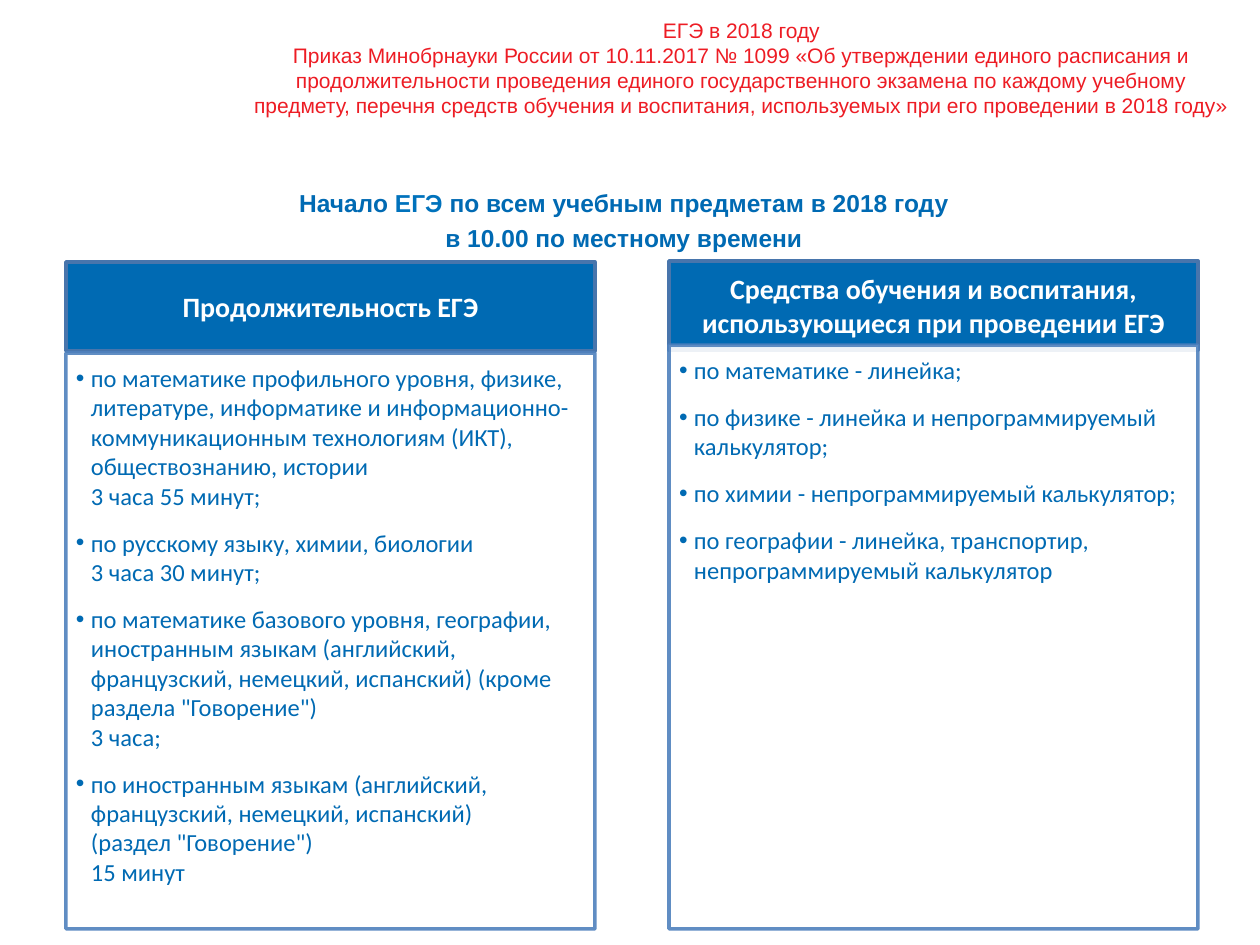
import pptx
import pptx.util
import pptx.dml.color
import pptx.enum.text
import pptx.oxml.ns
import lxml.etree

TITLE = (
    "ЕГЭ в 2018 году\v"
    "Приказ Минобрнауки России от 10.11.2017 № 1099 «Об утверждении единого расписания и "
    "продолжительности проведения единого государственного экзамена по каждому учебному "
    "предмету, перечня средств обучения и воспитания, используемых при его проведении в 2018 году»"
)
START = [
    ("Начало ", "blue"),
    ("ЕГЭ ", "bright_blue"),
    ("по всем учебным предметам в 2018 году\vв 10.00 по местному времени", "blue"),
]
COLUMNS = [
    {
        "heading": "Продолжительность ЕГЭ",
        "items": [
            "по математике профильного уровня, физике, литературе, информатике и "
            "информационно-коммуникационным технологиям (ИКТ), обществознанию, истории\v"
            "3 часа 55 минут;",
            "по русскому языку, химии, биологии\v3 часа 30 минут;",
            "по математике базового уровня, географии, иностранным языкам (английский, "
            "французский, немецкий, испанский) (кроме раздела \"Говорение\")\v3 часа;",
            "по иностранным языкам (английский, французский, немецкий, испанский)\v"
            "(раздел \"Говорение\")\v15 минут",
        ],
        "left": 66, "heading_top": 262, "list_top": 353,
    },
    {
        "heading": "Средства обучения и воспитания, использующиеся при проведении ЕГЭ",
        "items": [
            "по математике - линейка;",
            "по физике - линейка и непрограммируемый калькулятор;",
            "по химии - непрограммируемый калькулятор;",
            "по географии - линейка, транспортир, непрограммируемый калькулятор",
        ],
        "left": 669, "heading_top": 261, "list_top": 345,
    },
]
COLUMN_WIDTH, HEADING_HEIGHT, LIST_BOTTOM, INDENT = 529, 89, 929, 15

THEME = {
    "red": "ED1C24", "blue": "006AB3", "bright_blue": "0072BC", "white": "FFFFFF",
    "heading_line": "4875AC", "list_line": "4F81BD",
    "title_size": 12, "start_size": 14, "heading_size": 16, "list_size": 14,
    "title_font": "Arial", "column_font": "Calibri",
    "line_width": 2, "opacity": 90,
}
SCALE = 914400 / 126


def px(length):
    return pptx.util.Emu(round(length * SCALE))


def color(name):
    return pptx.dml.color.RGBColor.from_string(THEME[name])


def place(box, left, top, width, height):
    box.left, box.top, box.width, box.height = map(px, (left, top, width, height))


def set_frame(box, anchor, insets):
    frame = box.text_frame
    frame.word_wrap = True
    frame.auto_size = pptx.enum.text.MSO_AUTO_SIZE.NONE
    frame.vertical_anchor = anchor
    frame.margin_left, frame.margin_top, frame.margin_right, frame.margin_bottom = map(px, insets)
    return frame


def style(font, family, size, color_name, bold=False):
    font.name = THEME[family]
    font.size = pptx.util.Pt(THEME[size])
    font.bold = bold
    font.color.rgb = color(color_name)


def format_para(para, align, after):
    para.alignment = align
    para.space_before = pptx.util.Pt(0)
    para.space_after = pptx.util.Pt(after)


def paint(box, fill, line):
    box.fill.solid()
    box.fill.fore_color.rgb = color(fill)
    box.line.color.rgb = color(line)
    box.line.width = pptx.util.Pt(THEME["line_width"])


def make_translucent(box):
    for tint in box._element.spPr.iter(pptx.oxml.ns.qn("a:srgbClr")):
        alpha = lxml.etree.SubElement(tint, pptx.oxml.ns.qn("a:alpha"))
        alpha.set("val", str(THEME["opacity"] * 1000))


def add_bullet(para):
    props = para._p.get_or_add_pPr()
    props.set("marL", str(px(INDENT)))
    props.set("indent", str(-px(INDENT)))
    bullet_font = lxml.etree.SubElement(props, pptx.oxml.ns.qn("a:buFont"))
    bullet_font.set("typeface", "Arial")
    lxml.etree.SubElement(props, pptx.oxml.ns.qn("a:buChar")).set("char", "•")


def fill_title(box):
    place(box, 237, 0, 1009, 135)
    frame = set_frame(box, MIDDLE, (13, 6, 13, 6))
    frame.text = TITLE
    para = frame.paragraphs[0]
    format_para(para, CENTER, 0)
    for span in para.runs:
        style(span.font, "title_font", "title_size", "red")


def add_start(page):
    box = page.shapes.add_textbox(px(57), px(176), px(1134), px(91))
    para = set_frame(box, TOP, (14, 6, 14, 6)).paragraphs[0]
    format_para(para, CENTER, 11.5)
    para.line_spacing = 1.2
    para.text = "".join(text for text, tint in START)
    for span in list(para.runs):
        para._p.remove(span._r)
    for line_break in para._p.findall(pptx.oxml.ns.qn("a:br")):
        para._p.remove(line_break)
    for text, tint in START:
        for number, part in enumerate(text.split("\v")):
            if number:
                para.add_line_break()
            span = para.add_run()
            span.text = part
            style(span.font, "title_font", "start_size", tint, True)


def fill_heading(box, column):
    place(box, column["left"], column["heading_top"], COLUMN_WIDTH, HEADING_HEIGHT)
    paint(box, "blue", "heading_line")
    frame = set_frame(box, MIDDLE, (15, 9, 15, 9))
    frame.text = column["heading"]
    para = frame.paragraphs[0]
    format_para(para, CENTER, 10)
    style(para.runs[0].font, "column_font", "heading_size", "white", True)


def fill_list(box, column):
    top = column["list_top"]
    place(box, column["left"], top, COLUMN_WIDTH, LIST_BOTTOM - top)
    paint(box, "white", "list_line")
    make_translucent(box)
    frame = set_frame(box, TOP, (10, 10, 14, 15))
    frame.text = "\n".join(column["items"])
    for para in frame.paragraphs:
        format_para(para, LEFT, 10)
        add_bullet(para)
        for span in para.runs:
            style(span.font, "column_font", "list_size", "blue")


TOP = pptx.enum.text.MSO_ANCHOR.TOP
MIDDLE = pptx.enum.text.MSO_ANCHOR.MIDDLE
LEFT = pptx.enum.text.PP_ALIGN.LEFT
CENTER = pptx.enum.text.PP_ALIGN.CENTER


def main():
    deck = pptx.Presentation()
    deck.slide_width, deck.slide_height = px(1260), px(945)
    page = deck.slides.add_slide(deck.slide_layouts.get_by_name("Comparison"))
    title, *bodies = page.placeholders
    fill_title(title)
    add_start(page)
    for column, heading, listing in zip(COLUMNS, bodies[::2], bodies[1::2]):
        fill_heading(heading, column)
        fill_list(listing, column)
    deck.save("out.pptx")


if __name__ == "__main__":
    main()
